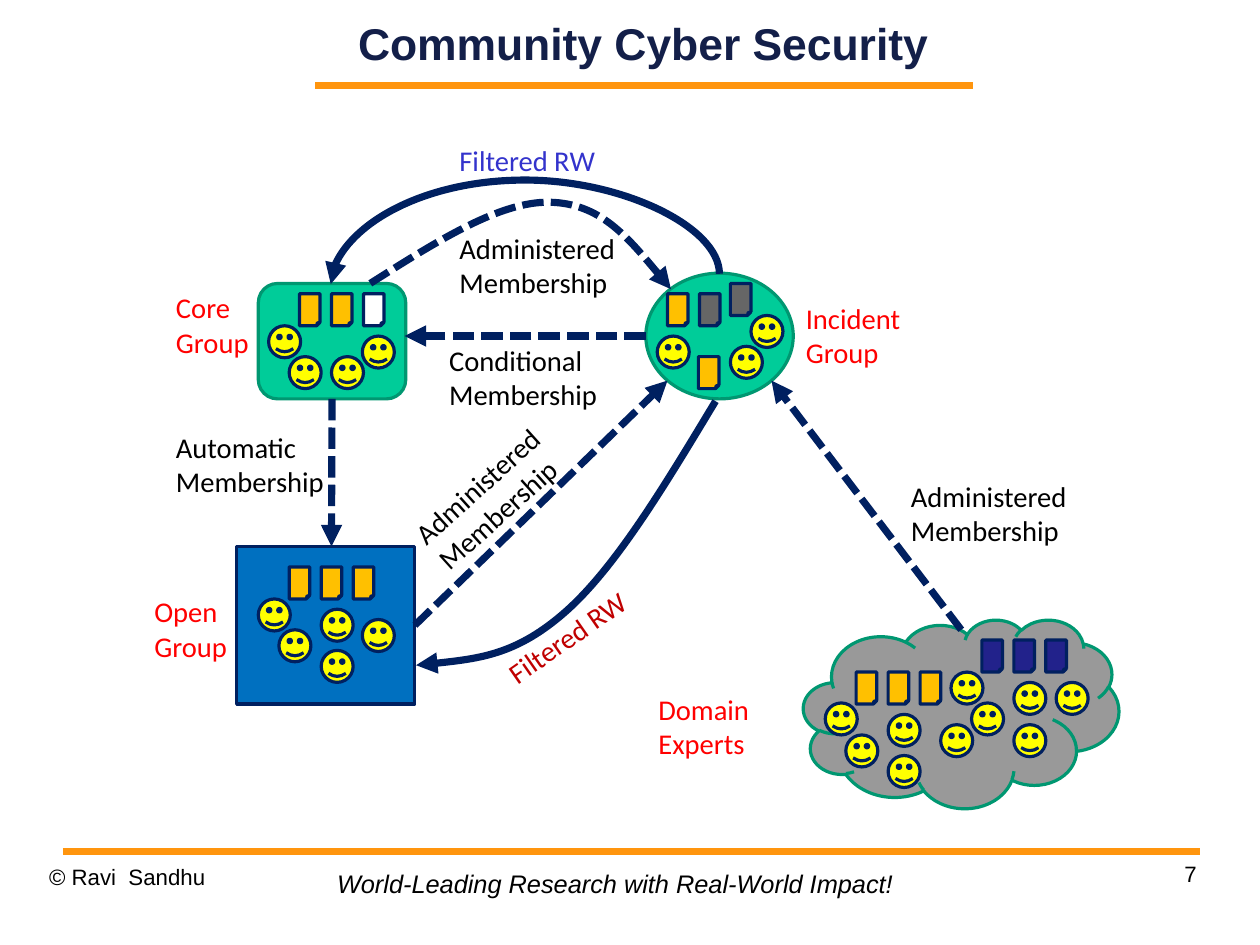
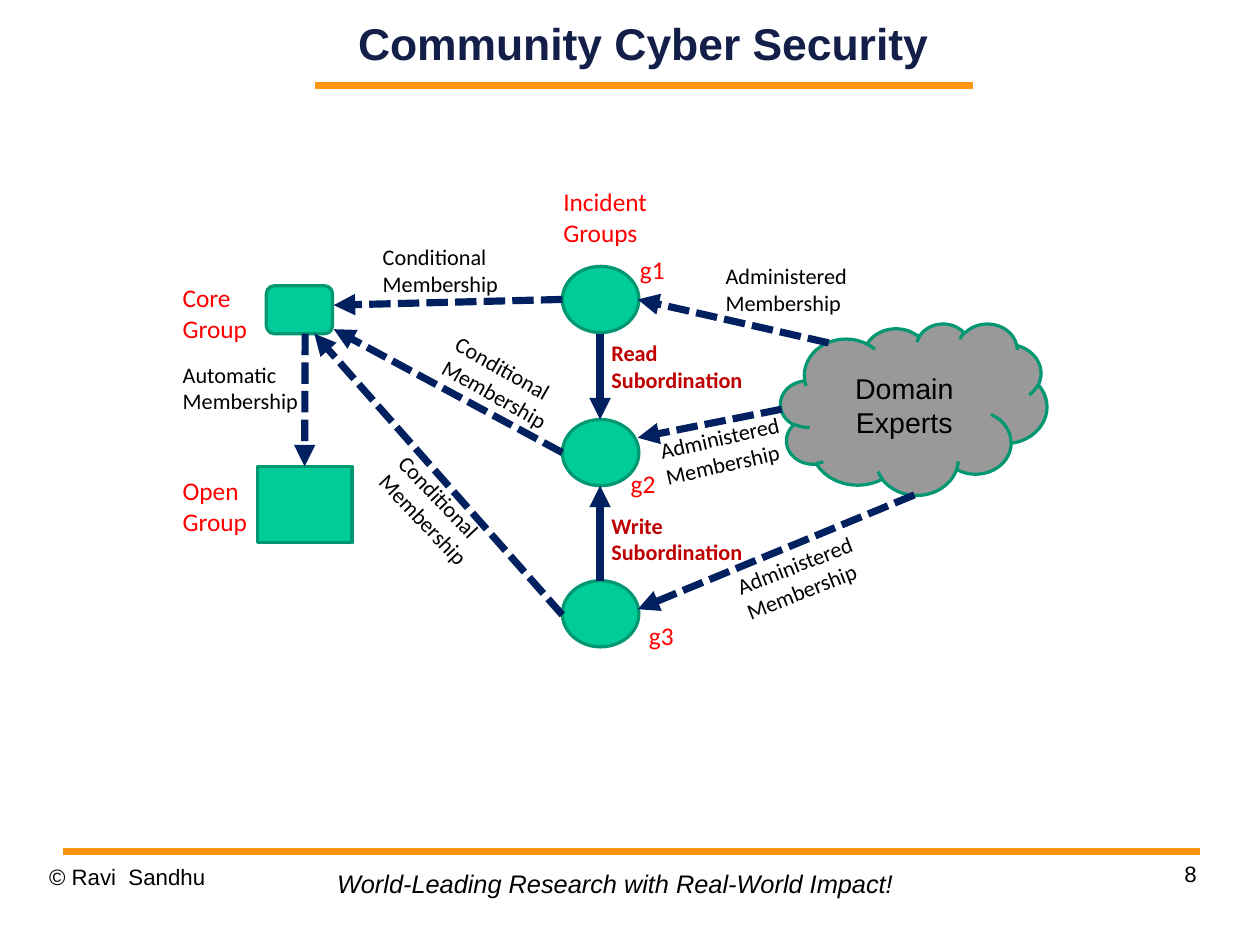
"""Build two slides on group membership in community cyber security."""
from lxml.etree import SubElement
from pptx import Presentation
from pptx.dml.color import RGBColor
from pptx.enum.dml import MSO_LINE
from pptx.enum.shapes import MSO_CONNECTOR, MSO_SHAPE
from pptx.enum.text import MSO_ANCHOR, PP_ALIGN
from pptx.oxml.ns import qn
from pptx.util import Cm, Inches, Pt

COLORS = {
    "title": "131F49", "rule": "FF950E", "black": "000000", "white": "FFFFFF",
    "navy": "002060", "green": "00CC99", "green_edge": "009771", "blue": "0070C0",
    "gray": "999999", "dark_gray": "666666", "yellow": "FFFF00", "amber": "FFC000",
    "indigo": "22228B", "red": "FF0000", "dark_red": "C00000", "violet": "3333CC",
}
FORMATS = {
    "title": {"name": "Arial", "size": Pt(28), "bold": True},
    "footer": {"name": "Arial", "size": Pt(14)},
    "motto": {"name": "Arial", "size": Pt(16), "italic": True},
    "cloud": {"name": "Arial", "size": Pt(18)},
    "large": {"name": "Calibri", "size": Pt(18)},
    "medium": {"name": "Calibri", "size": Pt(16)},
    "small": {"name": "Calibri", "size": Pt(14)},
    "strong": {"name": "Calibri", "size": Pt(14), "bold": True},
}
NO_INSET, NORMAL_INSET, WIDE_INSET = (0, 0), (0.1, 0.05), (0.11, 0.06)
TOP, BOTTOM, RIGHT = 0, 2, 3
ICON_SIZE, DOCUMENT_WIDTH, DOCUMENT_PITCH = 0.28, 0.18, 0.28


def color(name):
    return RGBColor.from_string(COLORS[name])


def write(shape, text, style, color_name, align=PP_ALIGN.LEFT):
    shape.text_frame.text = text
    for paragraph in shape.text_frame.paragraphs:
        paragraph.alignment = align
        for attribute, value in FORMATS[style].items():
            setattr(paragraph.font, attribute, value)
        paragraph.font.color.rgb = color(color_name)


def add_text(slide, text, box, style, color_name="black", inset=NORMAL_INSET,
             align=PP_ALIGN.LEFT, anchor=MSO_ANCHOR.TOP, rotation=0, wrap=True):
    shape = slide.shapes.add_textbox(*map(Inches, box))
    shape.rotation = rotation
    horizontal, vertical = map(Inches, inset)
    settings = {
        "word_wrap": wrap, "vertical_anchor": anchor,
        "margin_left": horizontal, "margin_right": horizontal,
        "margin_top": vertical, "margin_bottom": vertical,
    }
    for attribute, value in settings.items():
        setattr(shape.text_frame, attribute, value)
    write(shape, text, style, color_name, align)


def add_node(slide, kind, box, fill="green", edge="green_edge"):
    shape = slide.shapes.add_shape(kind, *map(Inches, box))
    shape.shadow.inherit = False
    shape.fill.solid()
    shape.fill.fore_color.rgb = color(fill)
    shape.line.color.rgb = color(edge)
    shape.line.width = Pt(2)
    return shape


def add_documents(slide, left, top, fills):
    for index, fill in enumerate(fills):
        box = (left + index * DOCUMENT_PITCH, top, DOCUMENT_WIDTH, ICON_SIZE)
        add_node(slide, MSO_SHAPE.FOLDED_CORNER, box, fill, "navy")


def add_members(slide, positions):
    for left, top in positions:
        box = (left, top, ICON_SIZE, ICON_SIZE)
        add_node(slide, MSO_SHAPE.SMILEY_FACE, box, "yellow", "navy")


def style_arrow(shape, dashed):
    shape.line.color.rgb = color("navy")
    shape.line.width = Pt(4.5)
    if dashed:
        shape.line.dash_style = MSO_LINE.SQUARE_DOT
    SubElement(shape._element.spPr.find(qn("a:ln")), qn("a:tailEnd"), type="triangle")


def add_line(slide, start, end, kind=MSO_CONNECTOR.STRAIGHT):
    return slide.shapes.add_connector(kind, *map(Inches, (*start, *end)))


def remove_shadow(connector):
    SubElement(connector._element.spPr, qn("a:effectLst"))


def add_arrow(slide, start, end, dashed=True):
    connector = add_line(slide, start, end)
    style_arrow(connector, dashed)
    remove_shadow(connector)
    return connector


def add_arc_arrow(slide, corner, opposite, bend):
    connector = add_line(slide, corner, opposite, MSO_CONNECTOR.CURVE)
    properties = connector._element.spPr
    for attribute, value in {"rot": "16200000", "flipH": "1", "flipV": "1"}.items():
        properties.find(qn("a:xfrm")).set(attribute, value)
    adjustments = properties.find(qn("a:prstGeom")).find(qn("a:avLst"))
    SubElement(adjustments, qn("a:gd"), name="adj1", fmla=f"val {bend}")
    style_arrow(connector, dashed=False)
    remove_shadow(connector)


def add_curved_arrow(slide, points, dashed):
    start, *controls = [tuple(map(Inches, point)) for point in points]
    builder = slide.shapes.build_freeform(*start)
    builder.add_line_segments(controls, close=False)
    shape = builder.convert_to_shape()
    outline = shape._element.xpath(".//a:path")[0]
    segments = outline.findall(qn("a:lnTo"))
    for index in range(0, len(segments), 3):
        bezier = SubElement(outline, qn("a:cubicBezTo"))
        for segment in segments[index:index + 3]:
            bezier.append(segment[0])
            outline.remove(segment)
    shape.shadow.inherit = False
    shape.fill.background()
    style_arrow(shape, dashed)


def add_base(presentation, number):
    slide = presentation.slides.add_slide(presentation.slide_layouts[6])
    for left, right, top in ((2.76, 8.51, 0.75), (0.55, 10.5, 7.45)):
        rule = add_line(slide, (left, top), (right, top))
        rule.line.color.rgb = color("rule")
        rule.line.width = Pt(4.31)
        remove_shadow(rule)
    add_text(slide, str(number), (7.9, 7.53, 2.57, 0.57), "footer",
             inset=NO_INSET, align=PP_ALIGN.RIGHT)
    add_text(slide, "Community Cyber Security", (2.41, 0, 6.43, 0.75), "title", "title",
             NO_INSET, PP_ALIGN.CENTER, MSO_ANCHOR.MIDDLE)
    add_text(slide, "© Ravi  Sandhu", (0.43, 7.55, 2.57, 0.57), "footer", inset=NO_INSET)
    add_text(slide, "World-Leading Research with Real-World Impact!",
             (2.85, 7.55, 5.08, 0.37), "motto", wrap=False)
    return slide


def build_sharing_slide(presentation):
    slide = add_base(presentation, 7)
    core_group = add_node(slide, MSO_SHAPE.FLOWCHART_ALTERNATE_PROCESS, (2.26, 2.48, 1.29, 1.01))
    open_group = add_node(slide, MSO_SHAPE.RECTANGLE, (2.07, 4.78, 1.56, 1.38), "blue", "navy")
    add_node(slide, MSO_SHAPE.OVAL, (5.65, 2.39, 1.29, 1.1))
    add_node(slide, MSO_SHAPE.CLOUD, (7.03, 5.42, 2.76, 1.65), "gray")

    add_arrow(slide, (5.65, 2.94), (3.54, 2.94))
    add_arrow(slide, (2.9, 3.49), (2.9, 4.78)).begin_connect(core_group, BOTTOM)
    add_arrow(slide, (3.63, 5.47), (5.84, 3.33)).begin_connect(open_group, RIGHT)
    add_arrow(slide, (8.41, 5.51), (6.75, 3.33))

    for left, top, fills in (
        (2.62, 2.57, ("amber", "amber", "white")),
        (2.53, 4.96, ("amber",) * 3),
        (5.84, 2.57, ("amber", "dark_gray")),
        (6.39, 2.48, ("dark_gray",)),
        (6.11, 3.12, ("amber",)),
        (7.49, 5.88, ("amber",) * 3),
        (8.59, 5.6, ("indigo",) * 3),
    ):
        add_documents(slide, left, top, fills)
    for positions in (
        ((2.35, 2.85), (2.53, 3.12), (2.9, 3.12), (3.17, 2.94)),
        ((2.26, 5.24), (2.44, 5.51), (2.81, 5.33), (2.81, 5.69), (3.17, 5.42)),
        ((5.75, 2.94), (6.39, 3.03), (6.57, 2.76)),
        ((7.22, 6.15), (7.4, 6.43), (7.77, 6.25), (7.77, 6.61), (8.23, 6.34),
         (8.32, 5.88), (8.5, 6.15), (8.87, 5.97), (8.87, 6.34), (9.24, 5.97)),
    ):
        add_members(slide, positions)

    add_arc_arrow(slide, (4.55, 0.74), (4.64, 4.14), -910000)
    add_curved_arrow(slide, ((3.24, 2.48), (3.81, 2.12), (4.37, 1.76), (4.81, 1.77),
                             (5.25, 1.78), (5.56, 2.15), (5.87, 2.53)), dashed=True)
    add_curved_arrow(slide, ((6.26, 3.51), (5.82, 4.24), (5.39, 4.96), (4.95, 5.35),
                             (4.52, 5.73), (4.08, 5.78), (3.64, 5.82)), dashed=False)

    for text, box, color_name, rotation in (
        ("Core Group", (1.43, 2.48, 0.92, 0.78), "red", 0),
        ("Incident Group", (6.94, 2.57, 1.19, 0.78), "red", 0),
        ("Open Group", (1.24, 5.14, 1.01, 0.72), "red", 0),
        ("Domain\nExperts", (5.65, 5.99, 1.19, 0.72), "red", 0),
        ("Conditional Membership", (3.82, 2.94, 1.56, 0.72), "black", 0),
        ("Automatic Membership", (1.43, 3.7, 1.56, 0.72), "black", 0),
        ("Administered Membership", (3.47, 3.97, 1.68, 0.72), "black", 318),
        ("Administered Membership", (3.91, 1.96, 1.74, 0.72), "black", 0),
        ("Administered Membership", (7.86, 4.13, 1.93, 0.72), "black", 0),
        ("Filtered RW", (3.91, 1.19, 1.56, 0.41), "violet", 0),
        ("Filtered RW", (4.24, 5.32, 1.56, 0.41), "dark_red", 325.2),
    ):
        add_text(slide, text, box, "large", color_name, WIDE_INSET, rotation=rotation)


def build_subordination_slide(presentation):
    slide = add_base(presentation, 8)
    add_node(slide, MSO_SHAPE.ROUNDED_RECTANGLE, (2.33, 2.5, 0.58, 0.42))
    open_group = add_node(slide, MSO_SHAPE.RECTANGLE, (2.25, 4.08, 0.83, 0.67))
    for top in (2.33, 3.67, 5.08):
        add_node(slide, MSO_SHAPE.OVAL, (4.92, top, 0.67, 0.58))
    cloud = add_node(slide, MSO_SHAPE.CLOUD, (6.83, 2.83, 2.33, 1.5), "gray")
    cloud.text_frame.word_wrap = True
    cloud.text_frame.vertical_anchor = MSO_ANCHOR.MIDDLE
    write(cloud, "Domain Experts", "cloud", "black", PP_ALIGN.CENTER)

    add_arrow(slide, (2.67, 2.92), (2.66, 4.08)).end_connect(open_group, TOP)
    for start, end in (
        ((4.92, 2.62), (2.92, 2.67)),
        ((4.92, 3.96), (2.92, 2.88)),
        ((4.92, 5.38), (2.75, 2.92)),
        ((7.25, 3), (5.58, 2.62)),
        ((6.84, 3.58), (5.58, 3.83)),
        ((8, 4.33), (5.58, 5.33)),
    ):
        add_arrow(slide, start, end)
    for start, end in (((5.25, 2.92), (5.25, 3.67)), ((5.25, 5.08), (5.25, 4.25))):
        add_arrow(slide, start, end, dashed=False)

    for text, box in (
        ("Core Group", (1.5, 2.42, 0.83, 0.64)),
        ("Incident Groups", (4.83, 1.58, 1.08, 0.64)),
        ("Open Group", (1.5, 4.11, 0.92, 0.64)),
        ("g1", (5.5, 2.17, 0.5, 0.37)),
        ("g2", (5.42, 4.05, 0.5, 0.37)),
        ("g3", (5.58, 5.38, 0.5, 0.37)),
    ):
        add_text(slide, text, box, "medium", "red")
    for text, box, rotation in (
        ("Automatic Membership", (1.5, 3.11, 1.42, 0.57), 0),
        ("Conditional Membership", (3.25, 2.08, 1.25, 0.57), 0),
        ("Conditional Membership", (3.78, 3.07, 1.24, 0.57), 29.6),
        ("Conditional Membership", (3.17, 4.22, 1.32, 0.57), 46.5),
        ("Administered Membership", (6.25, 2.25, 1.42, 0.57), 0),
        ("Administered Membership", (5.69, 3.64, 1.42, 0.57), 347.2),
        ("Administered Membership", (6.36, 4.74, 1.42, 0.57), 338.7),
    ):
        add_text(slide, text, box, "small", rotation=rotation)
    for text, box in (
        ("Read Subordination", (5.25, 2.92, 1.58, 0.57)),
        ("Write Subordination", (5.25, 4.43, 1.5, 0.57)),
    ):
        add_text(slide, text, box, "strong", "dark_red")


def main():
    presentation = Presentation()
    presentation.slide_width, presentation.slide_height = Cm(28), Cm(21)
    build_sharing_slide(presentation)
    build_subordination_slide(presentation)
    presentation.save("out.pptx")


if __name__ == "__main__":
    main()
